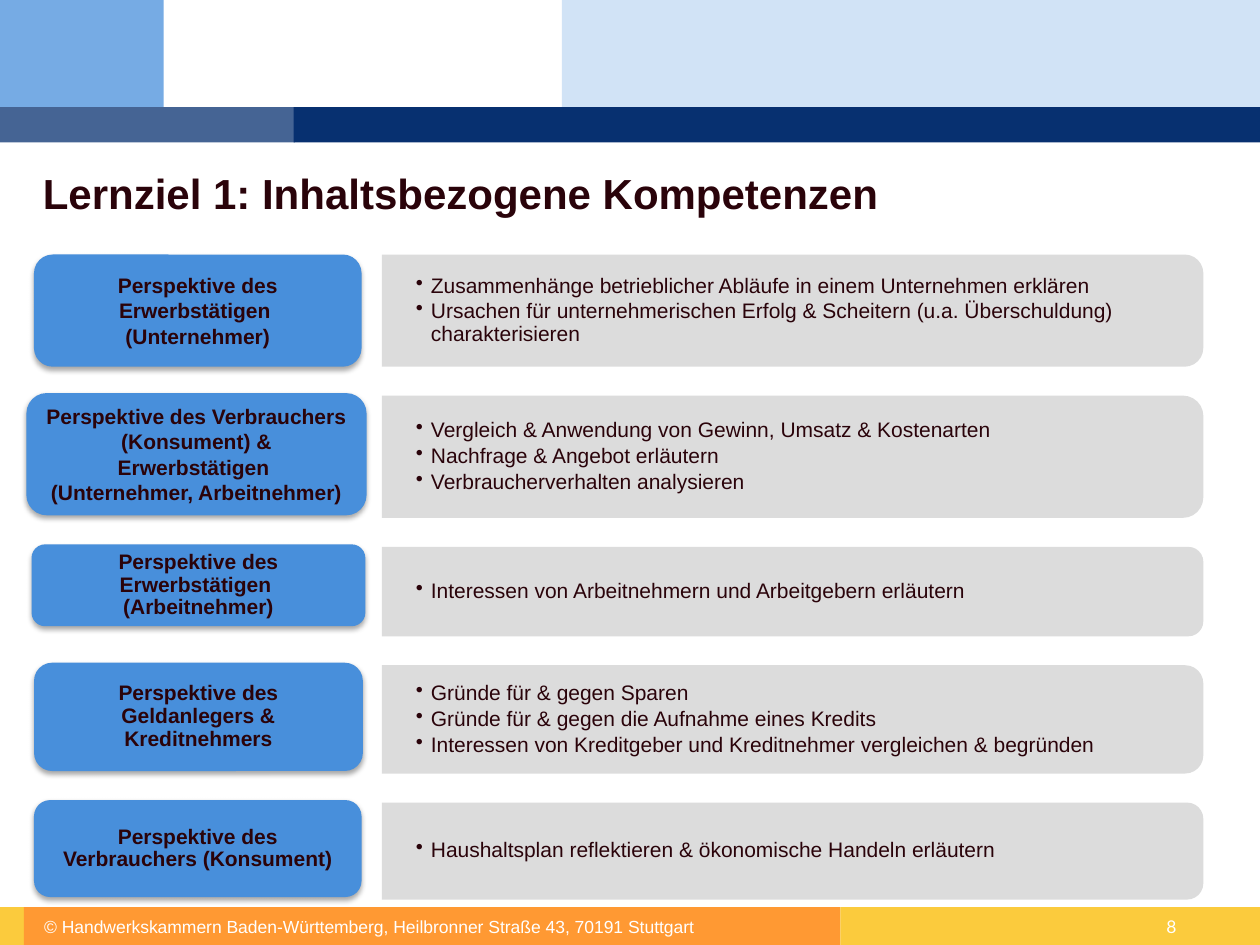
import dataclasses

import pptx
import pptx.dml.color
import pptx.enum.shapes
import pptx.enum.text
import pptx.oxml.ns
import pptx.util
from lxml import etree

Inches = pptx.util.Inches
Pt = pptx.util.Pt
qn = pptx.oxml.ns.qn
RGB = pptx.dml.color.RGBColor.from_string
SHAPE = pptx.enum.shapes.MSO_SHAPE
ALIGN = pptx.enum.text.PP_ALIGN
ANCHOR = pptx.enum.text.MSO_ANCHOR


@dataclasses.dataclass(frozen=True)
class Theme:
    text: str = "2A030A"
    white: str = "FFFFFF"
    pale: str = "D1E3F6"
    sky: str = "76ABE4"
    slate: str = "456494"
    navy: str = "073070"
    yellow: str = "FBCB3D"
    orange: str = "FF9933"
    label: str = "488FDB"
    panel: str = "D9D9D9"
    font: str = "Arial"
    number_font: str = "Lato"
    title_size: int = 24
    body_size: int = 12
    footer_size: int = 10


THEME = Theme()

BANDS = [
    (4.46, 0, 5.54, 0.85, THEME.pale),
    (0, 7.2, 0.19, 0.3, THEME.yellow),
    (0, 0, 1.3, 0.85, THEME.sky),
    (0.19, 7.2, 6.48, 0.3, THEME.orange),
    (0, 0.85, 2.34, 0.28, THEME.slate),
    (2.33, 0.85, 7.67, 0.28, THEME.navy),
    (6.67, 7.2, 3.33, 0.3, THEME.yellow),
]

ROWS = [
    (0.89, (0.27, 2.02, 2.6, 0.89), 1,
     ["Perspektive des Erwerbstätigen ", "(Unternehmer)"],
     ["Zusammenhänge betrieblicher Abläufe in einem Unternehmen erklären",
      "Ursachen für unternehmerischen Erfolg & Scheitern (u.a. Überschuldung) charakterisieren"]),
    (0.97, (0.21, 3.12, 2.7, 0.97), 1,
     ["Perspektive des Verbrauchers (Konsument) & Erwerbstätigen ",
      "(Unternehmer, Arbeitnehmer)"],
     ["Vergleich & Anwendung von Gewinn, Umsatz & Kostenarten",
      "Nachfrage & Angebot erläutern",
      "Verbraucherverhalten analysieren"]),
    (0.71, (0.25, 4.32, 2.65, 0.65), 0.9,
     ["Perspektive des Erwerbstätigen \v(Arbeitnehmer)"],
     ["Interessen von Arbeitnehmern und Arbeitgebern erläutern"]),
    (0.86, (0.27, 5.26, 2.61, 0.86), 0.9,
     ["Perspektive des Geldanlegers & Kreditnehmers"],
     ["Gründe für & gegen Sparen",
      "Gründe für & gegen die Aufnahme eines Kredits",
      "Interessen von Kreditgeber und Kreditnehmer vergleichen & begründen"]),
    (0.77, (0.27, 6.35, 2.6, 0.77), 0.9,
     ["Perspektive des Verbrauchers (Konsument)"],
     ["Haushaltsplan reflektieren & ökonomische Handeln erläutern"]),
]

PANEL_LEFT, PANEL_TOP, PANEL_WIDTH, PANEL_GAP = 3.03, 2.02, 6.52, 0.23


def write(tf, lines, size=THEME.body_size, color=THEME.text, font=THEME.font, bold=False,
          align=ALIGN.LEFT, anchor=ANCHOR.TOP, insets=(0.1, 0.05), spacing=None, bullet=None):
    """Fill a text frame with one paragraph per line."""
    tf.word_wrap = True
    tf.vertical_anchor = anchor
    tf.margin_left = tf.margin_right = Inches(insets[0])
    tf.margin_top = tf.margin_bottom = Inches(insets[1])
    for i, line in enumerate(lines):
        p = tf.paragraphs[0] if i == 0 else tf.add_paragraph()
        p.text = line
        p.alignment = align
        p.line_spacing = spacing
        if bullet:
            p.level = 1
            p.space_after = Pt(0.15 * size)
            pPr = p._p.get_or_add_pPr()
            pPr.set("marL", str(Inches(0.12)))
            pPr.set("indent", str(-Inches(0.12)))
            etree.SubElement(pPr, qn("a:buChar"), char=bullet)
        for r in p.runs:
            r.font.size, r.font.name, r.font.bold = Pt(size), font, bold
            r.font.color.rgb = RGB(color)
        for br in p._p.findall(qn("a:br")):
            etree.SubElement(br, qn("a:rPr"), sz=str(size * 100))


class Deck:
    """Hold the theme and the current slide."""

    def __init__(self, prs, theme):
        self.theme = theme
        self.s = prs.slides.add_slide(prs.slide_layouts[5])

    def title(self, text, x, y, w, h):
        """Place and format the title placeholder."""
        sp = self.s.shapes.title
        sp.left, sp.top, sp.width, sp.height = map(Inches, (x, y, w, h))
        write(sp.text_frame, [text], size=self.theme.title_size, bold=True, insets=(0, 0))

    def shape(self, kind, x, y, w, h, color):
        """Add a filled shape without outline or shadow."""
        sp = self.s.shapes.add_shape(kind, *map(Inches, (x, y, w, h)))
        sp.fill.solid()
        sp.fill.fore_color.rgb = RGB(color)
        sp.line.fill.background()
        sp.shadow.inherit = False
        return sp

    def text(self, lines, x, y, w, h, **style):
        """Add a text box."""
        tb = self.s.shapes.add_textbox(*map(Inches, (x, y, w, h)))
        write(tb.text_frame, lines, **style)

    def label(self, lines, box, spacing):
        """Add a rounded label with a soft shadow."""
        sp = self.shape(SHAPE.ROUNDED_RECTANGLE, *box, self.theme.label)
        effects = sp._element.spPr.find(qn("a:effectLst"))
        shadow = etree.SubElement(effects, qn("a:outerShdw"), blurRad=str(Pt(3.1)),
                                  dist=str(Pt(1.8)), dir="5400000", rotWithShape="0")
        color = etree.SubElement(shadow, qn("a:srgbClr"), val="000000")
        etree.SubElement(color, qn("a:alpha"), val="35000")
        write(sp.text_frame, lines, bold=True, align=ALIGN.CENTER,
              anchor=ANCHOR.MIDDLE, spacing=spacing)

    def panel(self, lines, x, y, w, h):
        """Add a panel rounded on its right side with bullets on it."""
        sp = self.shape(SHAPE.ROUND_2_SAME_RECTANGLE, x + (w - h) / 2, y + (h - w) / 2,
                        h, w, self.theme.panel)
        sp.rotation = 90
        color = sp._element.spPr.find(qn("a:solidFill"))[0]
        etree.SubElement(color, qn("a:alpha"), val="90000")
        self.text(lines, x, y + 0.04, w - 0.04, h - 0.08, anchor=ANCHOR.MIDDLE,
                  insets=(0.27, 0.14), spacing=0.9, bullet="•")


def main():
    """Build the slide and save it."""
    prs = pptx.Presentation()
    prs.slide_width, prs.slide_height = Inches(10), Inches(7.5)
    deck = Deck(prs, THEME)
    for band in BANDS:
        deck.shape(SHAPE.RECTANGLE, *band)
    footer = dict(size=THEME.footer_size, color=THEME.white)
    deck.text(["© Handwerkskammern Baden-Württemberg, Heilbronner Straße 43, 70191 Stuttgart"],
              0.35, 7.2, 6.31, 0.3, anchor=ANCHOR.MIDDLE, insets=(0, 0), **footer)
    deck.text(["8"], 9.16, 7.22, 0.7, 0.18, font=THEME.number_font, **footer)
    deck.title("Lernziel 1: Inhaltsbezogene Kompetenzen", 0.34, 1.33, 8.84, 0.75)
    top = PANEL_TOP
    for height, box, spacing, label, bullets in ROWS:
        deck.panel(bullets, PANEL_LEFT, top, PANEL_WIDTH, height)
        deck.label(label, box, spacing)
        top += height + PANEL_GAP
    prs.save("out.pptx")


if __name__ == "__main__":
    main()
